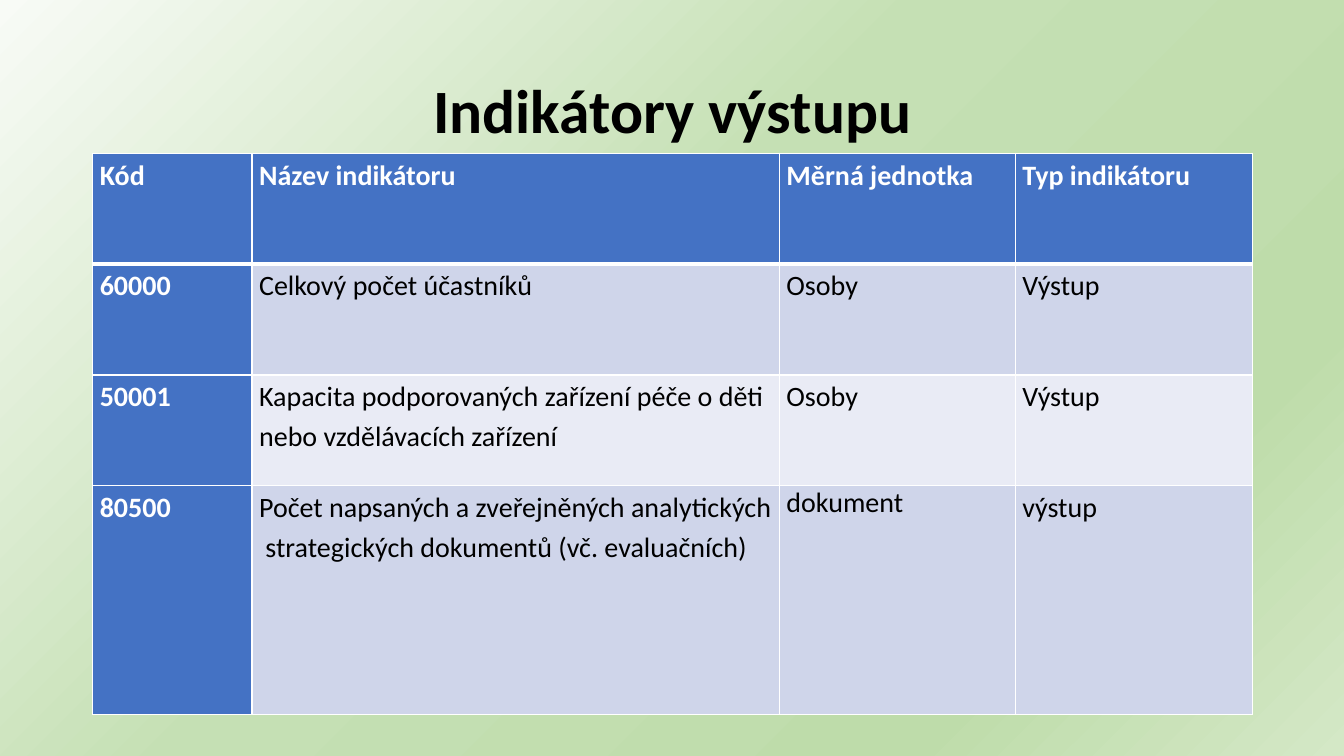
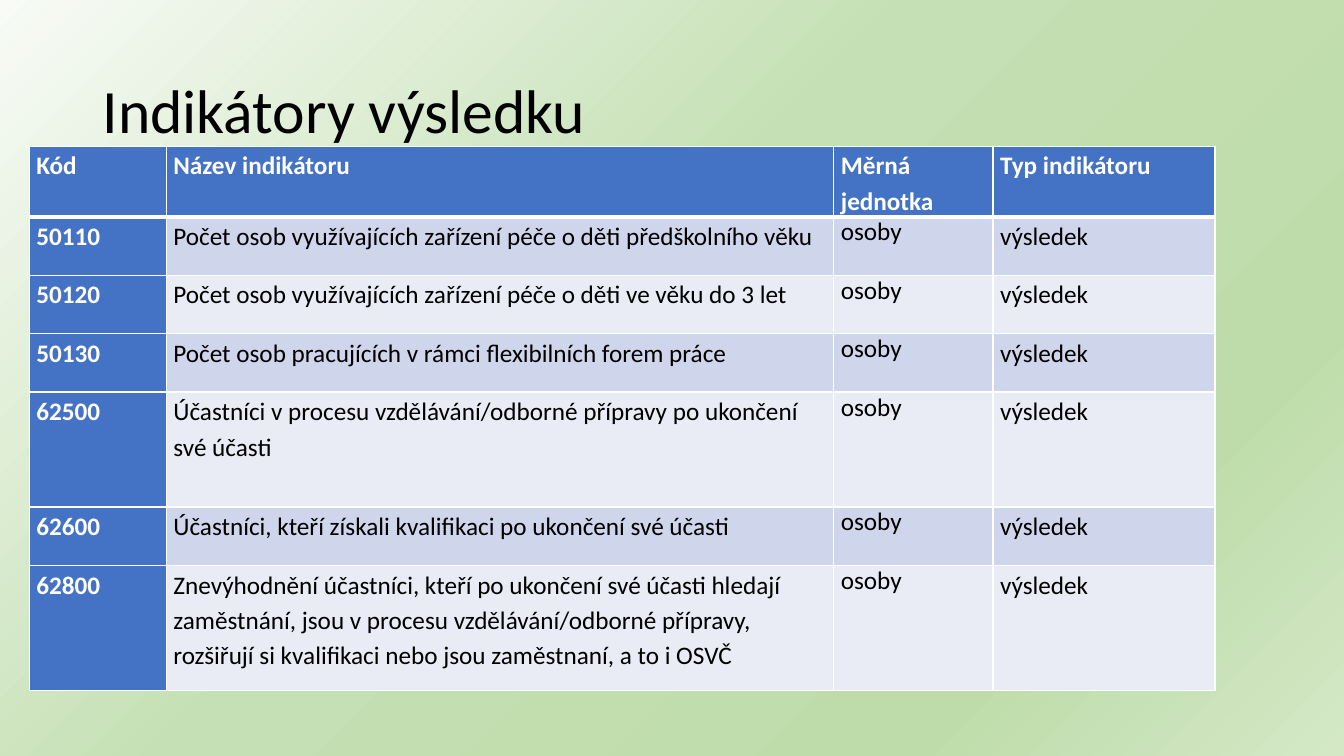
from lxml.etree import SubElement
from pptx import Presentation
from pptx.dml.color import RGBColor
from pptx.enum.text import MSO_ANCHOR, PP_ALIGN
from pptx.oxml.ns import qn
from pptx.util import Inches, Pt

# Shared look
FONT = "Calibri"
BLACK = RGBColor(0x00, 0x00, 0x00)
WHITE = RGBColor(0xFF, 0xFF, 0xFF)
BLUE = RGBColor(0x44, 0x72, 0xC4)
BAND_DARK = RGBColor(0xCF, 0xD5, 0xEA)
BAND_LIGHT = RGBColor(0xE9, 0xEB, 0xF5)
BACKGROUND_STOPS = [
    (0, RGBColor(0xF8, 0xFB, 0xF6)),
    (44, RGBColor(0xC5, 0xE0, 0xB4)),
    (79, RGBColor(0xBE, 0xDC, 0xAA)),
    (100, RGBColor(0xD4, 0xE8, 0xC6)),
]
HEADER = ("Kód", "Název indikátoru", "Měrná jednotka", "Typ indikátoru")
SINGLE_SPACED = {"dokument", "osoby"}

# Content of each slide
SLIDES = [
    {
        "title": "Indikátory výstupu",
        "title_bold": True,
        "title_align": PP_ALIGN.CENTER,
        "left": 0.92,
        "top": 1.52,
        "columns": [1.58, 5.23, 2.34, 2.35],
        "row_heights": [1.1, 1.1, 1.1, 2.27],
        "size": 20,
        "rows": [
            ("60000", "Celkový počet účastníků", "Osoby", "Výstup"),
            ("50001", "Kapacita podporovaných zařízení péče o děti nebo "
             "vzdělávacích zařízení", "Osoby", "Výstup"),
            ("80500", "Počet napsaných a zveřejněných analytických  strategických "
             "dokumentů (vč. evaluačních)", "dokument", "výstup"),
        ],
    },
    {
        "title": "Indikátory výsledku",
        "title_bold": False,
        "title_align": PP_ALIGN.LEFT,
        "left": 0.29,
        "top": 1.45,
        "columns": [1.36, 6.62, 1.58, 2.2],
        "row_heights": [0.7, 0.58, 0.58, 0.58, 1.14, 0.58, 1.24],
        "size": 18,
        "rows": [
            (code, name, "osoby", "výsledek")
            for code, name in [
                ("50110", "Počet osob využívajících zařízení péče o děti předškolního věku"),
                ("50120", "Počet osob využívajících zařízení péče o děti ve věku do 3 let"),
                ("50130", "Počet osob pracujících v rámci flexibilních forem práce"),
                ("62500", "Účastníci v procesu vzdělávání/odborné přípravy po ukončení "
                 "své účasti"),
                ("62600", "Účastníci, kteří získali kvalifikaci po ukončení své účasti"),
                ("62800", "Znevýhodnění účastníci, kteří po ukončení své účasti hledají "
                 "zaměstnání, jsou v procesu vzdělávání/odborné přípravy, rozšiřují si "
                 "kvalifikaci nebo jsou zaměstnaní, a to i OSVČ"),
            ]
        ],
    },
]


def write_text(text_frame, text, *, size, color=BLACK, bold=False,
               align=PP_ALIGN.LEFT, line_spacing=1.0, space_after=0):
    paragraph = text_frame.paragraphs[0]
    paragraph.alignment = align
    paragraph.line_spacing = line_spacing
    paragraph.space_after = Pt(space_after)
    run = paragraph.add_run()
    run.text = text
    run.font.name = FONT
    run.font.size = Pt(size)
    run.font.bold = bold
    run.font.color.rgb = color


def add_borders(cell, widths):
    properties = cell._tc.get_or_add_tcPr()
    for side, width in widths.items():
        line = SubElement(properties, qn(f"a:ln{side}"), w=str(Pt(width)))
        fill = SubElement(line, qn("a:solidFill"))
        SubElement(fill, qn("a:srgbClr"), val=str(WHITE))


presentation = Presentation()
presentation.slide_width = Inches(13.33)
presentation.slide_height = Inches(7.5)

# Gradient background on the master
master = presentation.slide_master
background_fill = master.background.fill
background_fill.gradient()
background_fill.gradient_angle = 315
stop_list = next(master.element.iter(qn("a:gsLst")))
for stop in list(stop_list):
    stop_list.remove(stop)
for position, color in BACKGROUND_STOPS:
    stop = SubElement(stop_list, qn("a:gs"), pos=str(position * 1000))
    SubElement(stop, qn("a:srgbClr"), val=str(color))

for content in SLIDES:
    slide = presentation.slides.add_slide(presentation.slide_layouts[6])

    # Title
    title = slide.shapes.add_textbox(Inches(0.92), Inches(0.4), Inches(11.5), Inches(1.45))
    title.text_frame.word_wrap = True
    title.text_frame.vertical_anchor = MSO_ANCHOR.MIDDLE
    write_text(title.text_frame, content["title"], size=44, bold=content["title_bold"],
               align=content["title_align"], line_spacing=0.9)

    # Indicator table
    columns, row_heights = content["columns"], content["row_heights"]
    table = slide.shapes.add_table(
        len(row_heights), len(columns), Inches(content["left"]), Inches(content["top"]),
        Inches(sum(columns)), Inches(sum(row_heights))).table
    table.horz_banding = False
    table.first_col = True
    for column, width in zip(table.columns, columns):
        column.width = Inches(width)
    for row, height in zip(table.rows, row_heights):
        row.height = Inches(height)

    # Cells: blue header row and code column, banded body
    for row_index, texts in enumerate([HEADER, *content["rows"]]):
        band = BAND_DARK if row_index % 2 else BAND_LIGHT
        for column_index, text in enumerate(texts):
            cell = table.cell(row_index, column_index)
            is_heading = row_index == 0 or column_index == 0
            cell.margin_left = cell.margin_right = Inches(0.07)
            cell.margin_top = cell.margin_bottom = 0
            add_borders(cell, {"L": 1, "R": 1, "T": 3 if row_index == 1 else 1,
                               "B": 3 if row_index == 0 else 1})
            cell.fill.solid()
            cell.fill.fore_color.rgb = BLUE if is_heading else band
            write_text(cell.text_frame, text, size=content["size"],
                       color=WHITE if is_heading else BLACK, bold=is_heading,
                       line_spacing=1.0 if text in SINGLE_SPACED else 1.15,
                       space_after=6)

presentation.save("out.pptx")
